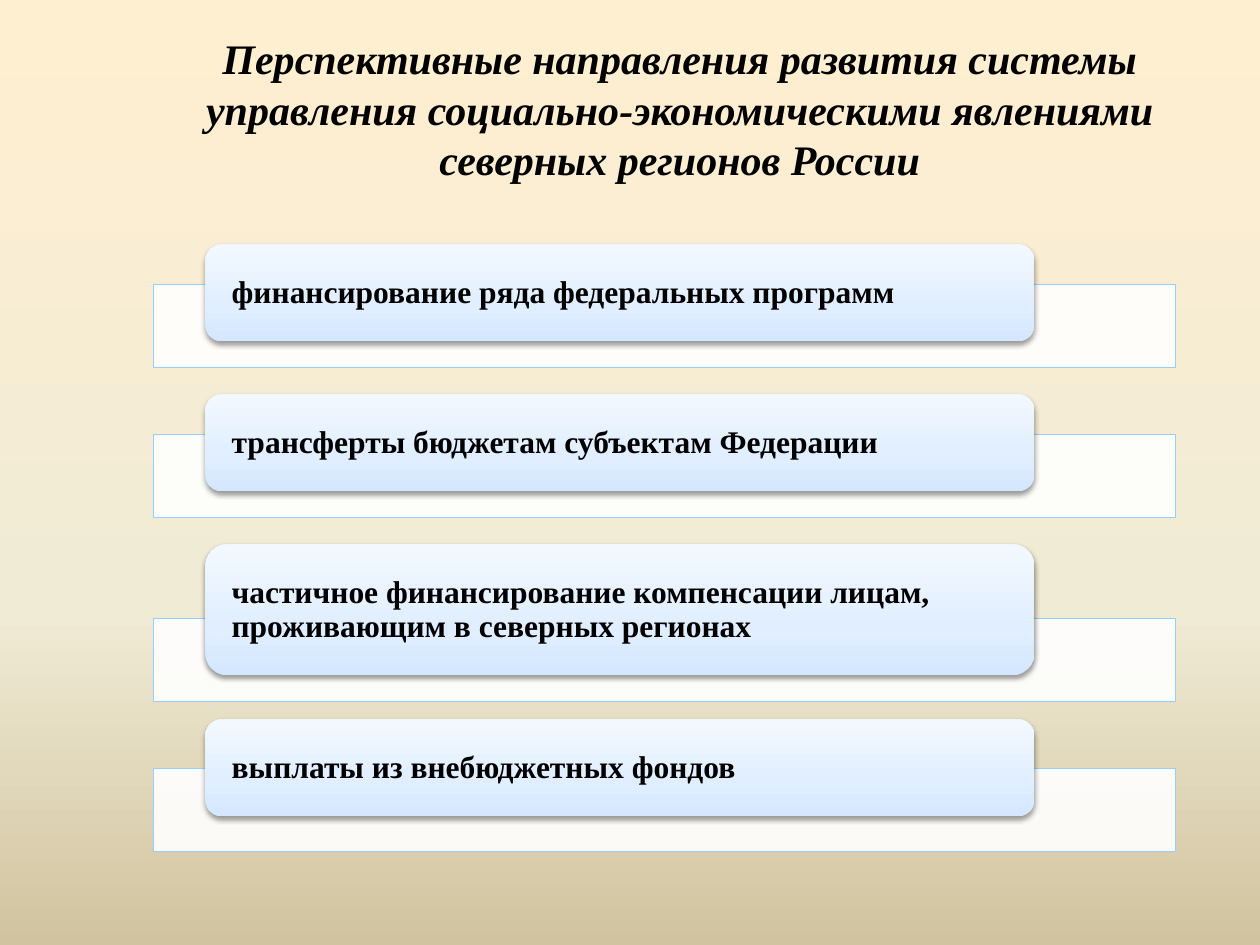
from lxml.etree import SubElement
from pptx import Presentation
from pptx.dml.color import RGBColor
from pptx.enum.shapes import MSO_SHAPE
from pptx.enum.text import MSO_ANCHOR, MSO_AUTO_SIZE, PP_ALIGN
from pptx.oxml.ns import qn
from pptx.util import Inches, Pt

TITLE = ("Перспективные направления развития системы управления "
         "социально-экономическими явлениями северных регионов России")
ROWS = [
    ("финансирование ряда федеральных программ", 1.94, 0.77, 2.26),
    ("трансферты бюджетам субъектам Федерации", 3.13, 0.77, 3.45),
    ("частичное финансирование компенсации лицам, проживающим в северных регионах",
     4.32, 1.04, 4.91),
    ("выплаты из внебюджетных фондов", 5.71, 0.77, 6.1),
]
COLORS = {"text": "000000", "bar": "FFFFFF", "edge": "99CCFF", "shade": "000000"}
BACK = [(0, "FFEFD1"), (65, "F0EBD5"), (100, "D1C39F")]
TILE = [(0, "D4E7FF"), (35, "E0EEFF"), (100, "F3F8FF")]
BAR_X, BAR_W, BAR_H = 1.22, 8.11, 0.66
TILE_X, TILE_W = 1.63, 6.58
INDENT, CORNER = 0.21, 0.05


def color(name):
    return RGBColor.from_string(COLORS[name])


def add_color(parent, value, alpha):
    node = SubElement(parent, qn("a:srgbClr"), val=value)
    SubElement(node, qn("a:alpha"), val=str(alpha * 1000))


def blend(fill, owner, stops, angle):
    fill.gradient()
    fill.gradient_angle = angle
    group = next(owner.iter(qn("a:gsLst")))
    for old in list(group):
        group.remove(old)
    for place, value in stops:
        stop = SubElement(group, qn("a:gs"), pos=str(place * 1000))
        add_color(stop, value, 100)


def write(frame, text, size, form, **font):
    frame.word_wrap = True
    for name, value in form.items():
        setattr(frame, name, value)
    para = frame.paragraphs[0]
    run = para.add_run()
    run.text = text
    look = {"name": "Times New Roman", "size": Pt(size), "bold": True, **font}
    for name, value in look.items():
        setattr(run.font, name, value)
    run.font.color.rgb = color("text")
    return para


def add_shape(slide, kind, *box):
    shape = slide.shapes.add_shape(kind, *map(Inches, box))
    shape.shadow.inherit = False
    return shape


def add_bar(slide, top):
    bar = add_shape(slide, MSO_SHAPE.RECTANGLE, BAR_X, top, BAR_W, BAR_H)
    bar.fill.solid()
    bar.fill.fore_color.rgb = color("bar")
    shade = next(bar.element.spPr.iter(qn("a:srgbClr")))
    SubElement(shade, qn("a:alpha"), val="90000")
    bar.line.color.rgb = color("edge")
    bar.line.width = Pt(0.75)


def add_tile(slide, text, top, height):
    tile = add_shape(slide, MSO_SHAPE.ROUNDED_RECTANGLE, TILE_X, top, TILE_W, height)
    blend(tile.fill, tile.element, TILE, 90)
    tile.line.fill.background()
    effects = tile.element.spPr.find(qn("a:effectLst"))
    shadow = SubElement(effects, qn("a:outerShdw"), blurRad=str(Pt(3.1)),
                        dist=str(Pt(1.6)), dir="5400000", rotWithShape="0")
    add_color(shadow, COLORS["shade"], 38)
    side = Inches(INDENT - CORNER * height)
    form = {"margin_left": side, "margin_right": side, "margin_top": 0,
            "margin_bottom": 0, "vertical_anchor": MSO_ANCHOR.MIDDLE}
    para = write(tile.text_frame, text, 18, form)
    para.alignment = PP_ALIGN.LEFT
    para.line_spacing = 0.9


def main():
    deck = Presentation()
    deck.slide_width, deck.slide_height = Inches(10), Inches(7.5)
    slide = deck.slides.add_slide(deck.slide_layouts[6])
    blend(slide.background.fill, slide.element, BACK, 270)
    title = slide.shapes.add_textbox(*map(Inches, (1.46, 0.21, 7.87, 1.31)))
    form = {"auto_size": MSO_AUTO_SIZE.SHAPE_TO_FIT_TEXT}
    write(title.text_frame, TITLE, 24, form, italic=True).alignment = PP_ALIGN.CENTER
    for text, top, height, bar in ROWS:
        add_bar(slide, bar)
        add_tile(slide, text, top, height)
    deck.save("out.pptx")


if __name__ == "__main__":
    main()
